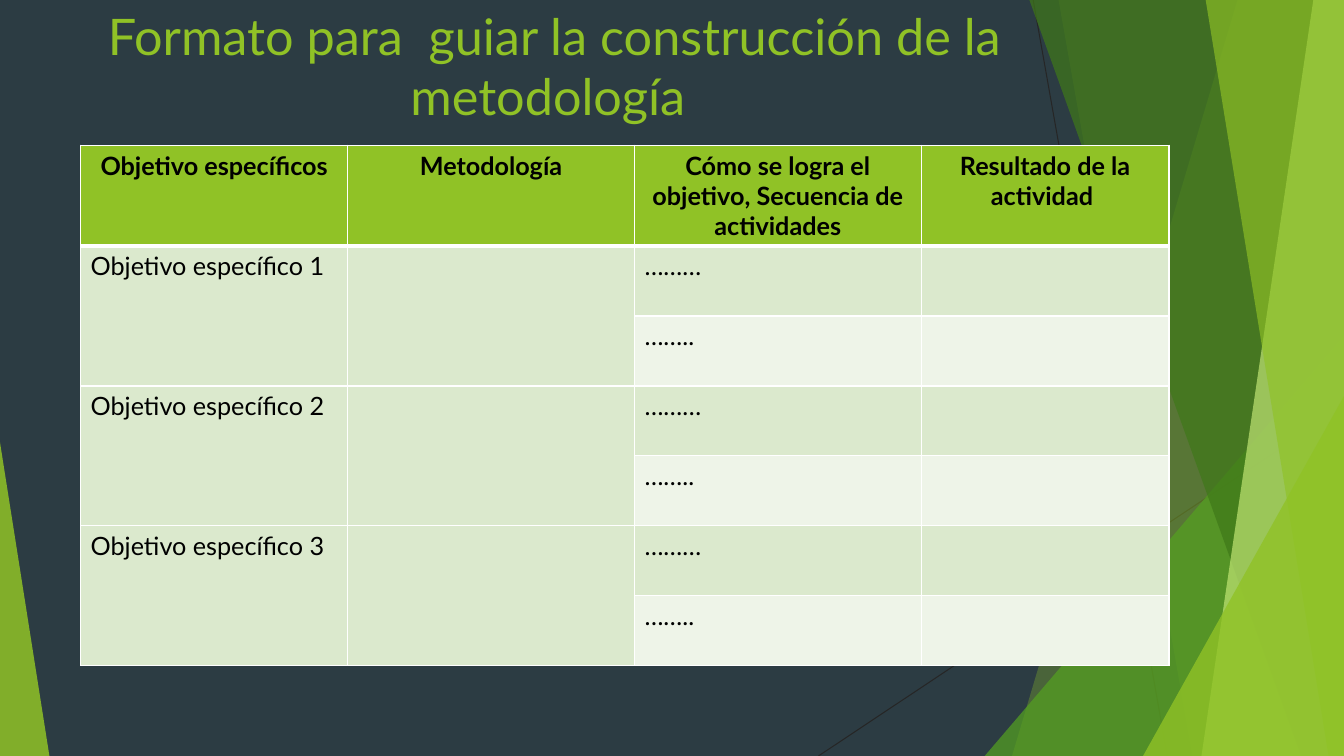
from lxml import etree
from pptx import Presentation
from pptx.dml.color import RGBColor
from pptx.enum.shapes import MSO_CONNECTOR as CONN, MSO_SHAPE as SHAPE
from pptx.enum.text import MSO_ANCHOR as ANCHOR, PP_ALIGN as ALIGN
from pptx.oxml.ns import qn
from pptx.util import Pt

W, H = 960, 540
BLEED = -0.6
COLORS = {
    "bg": "2C3C43", "line": "262626", "lime": "90C226", "green": "54A021",
    "forest": "3F7819", "pale": "C0E474", "band": "DBE9CD",
    "light": "EEF4E8", "white": "FFFFFF", "black": "000000",
}


class Deck:
    font = "Lato"

    def __init__(self):
        self.prs = Presentation()
        self.prs.slide_width, self.prs.slide_height = Pt(W), Pt(H)
        self.s = self.prs.slides.add_slide(self.prs.slide_layouts[6])
        self.paint(self.s.background.fill, "bg")

    def paint(self, fill, color, alpha=100):
        fill.solid()
        fill.fore_color.rgb = RGBColor.from_string(COLORS[color])
        if alpha < 100:
            clr = fill._xPr.find(qn("a:solidFill"))[0]
            etree.SubElement(clr, qn("a:alpha"), val=str(alpha * 1000))

    def finish(self, sp, color, alpha):
        sp.shadow.inherit = False
        sp.line.fill.background()
        self.paint(sp.fill, color, alpha)

    def line(self, x1, y1, x2, y2):
        cn = self.s.shapes.add_connector(CONN.STRAIGHT, Pt(x1), Pt(y1), Pt(x2), Pt(y2))
        cn.line.width = Pt(0.75)
        cn.line.color.rgb = RGBColor.from_string(COLORS["line"])
        etree.SubElement(cn._element.spPr, qn("a:effectLst"))

    def beam(self, top_x, bottom_x, color, alpha):
        fb = self.s.shapes.build_freeform(Pt(top_x), Pt(BLEED))
        corners = [(W, BLEED), (W, H), (bottom_x, H)]
        fb.add_line_segments([(Pt(x), Pt(y)) for x, y in corners], close=True)
        self.finish(fb.convert_to_shape(), color, alpha)

    def triangle(self, x, y, w, apex, color, alpha):
        sp = self.s.shapes.add_shape(
            SHAPE.ISOSCELES_TRIANGLE, Pt(x), Pt(y), Pt(w), Pt(H - y))
        sp.adjustments[0] = apex
        self.finish(sp, color, alpha)

    def text(self, tf, words, size, color, bold=False, align=ALIGN.LEFT):
        p = tf.paragraphs[0]
        p.alignment = align
        r = p.add_run()
        r.text = words
        r.font.name, r.font.size, r.font.bold = self.font, Pt(size), bold
        r.font.color.rgb = RGBColor.from_string(COLORS[color])

    def title(self, x, y, w, h, words):
        tf = self.s.shapes.add_textbox(Pt(x), Pt(y), Pt(w), Pt(h)).text_frame
        tf.word_wrap = True
        tf.vertical_anchor = ANCHOR.TOP
        self.text(tf, words, 36, "lime", align=ALIGN.CENTER)

    def borders(self, cell, **widths):
        tcPr = cell._tc.get_or_add_tcPr()
        for side in "LRTB":
            ln = etree.SubElement(tcPr, qn("a:ln" + side), w=str(Pt(widths.get(side, 1))))
            fill = etree.SubElement(ln, qn("a:solidFill"))
            etree.SubElement(fill, qn("a:srgbClr"), val=COLORS["white"])

    def table(self, x, y, widths, heights, rows):
        tbl = self.s.shapes.add_table(
            len(rows), len(widths), Pt(x), Pt(y), Pt(sum(widths)), Pt(sum(heights))).table
        tbl.first_row = tbl.horz_banding = False
        for col, w in zip(tbl.columns, widths):
            col.width = Pt(w)
        for i, (row, h) in enumerate(zip(rows, heights)):
            tbl.rows[i].height = Pt(h)
            header = i == 0
            for j, words in enumerate(row):
                cell = tbl.cell(i, j)
                self.borders(cell, T=3 if i == 1 else 1, B=3 if header else 1)
                banded = i % 2 or j < 2
                self.paint(cell.fill, "lime" if header else "band" if banded else "light")
                if words:
                    self.text(cell.text_frame, words, 18, "black", header,
                              ALIGN.CENTER if header else ALIGN.LEFT)
        for i in range(1, len(rows), 2):
            for j in range(2):
                tbl.cell(i, j).merge(tbl.cell(i + 1, j))


def main():
    deck = Deck()
    deck.line(738, 0, 833.8, H)
    deck.line(W, 290.2, 584.6, H)
    deck.beam(884.2, 722.9, "lime", 30)
    deck.beam(756, 851.8, "lime", 20)
    deck.triangle(703.4, 239.8, 256.6, 1, "green", 72)
    deck.beam(735.1, 929.5, "forest", 70)
    deck.beam(938.2, 858.2, "pale", 70)
    deck.beam(861.1, 949, "lime", 65)
    deck.triangle(816.5, 283, 143.5, 1, "lime", 80)
    deck.triangle(0, 316, 35.3, 0, "lime", 85)

    deck.title(57.6, 0, 676.8, 103.7,
               "Formato para  guiar la construcción de la metodología ")

    rows = [["Objetivo específicos", "Metodología",
             "Cómo se logra el objetivo, Secuencia de actividades",
             "Resultado de la actividad "]]
    for n in range(1, 4):
        rows.append([f"Objetivo específico {n}", "", "………", ""])
        rows.append(["", "", "……..", ""])
    deck.table(57.6, 103.7, [190.8, 204.8, 204.8, 177.1], [72] + [50] * 6, rows)
    deck.prs.save("out.pptx")


if __name__ == "__main__":
    main()
